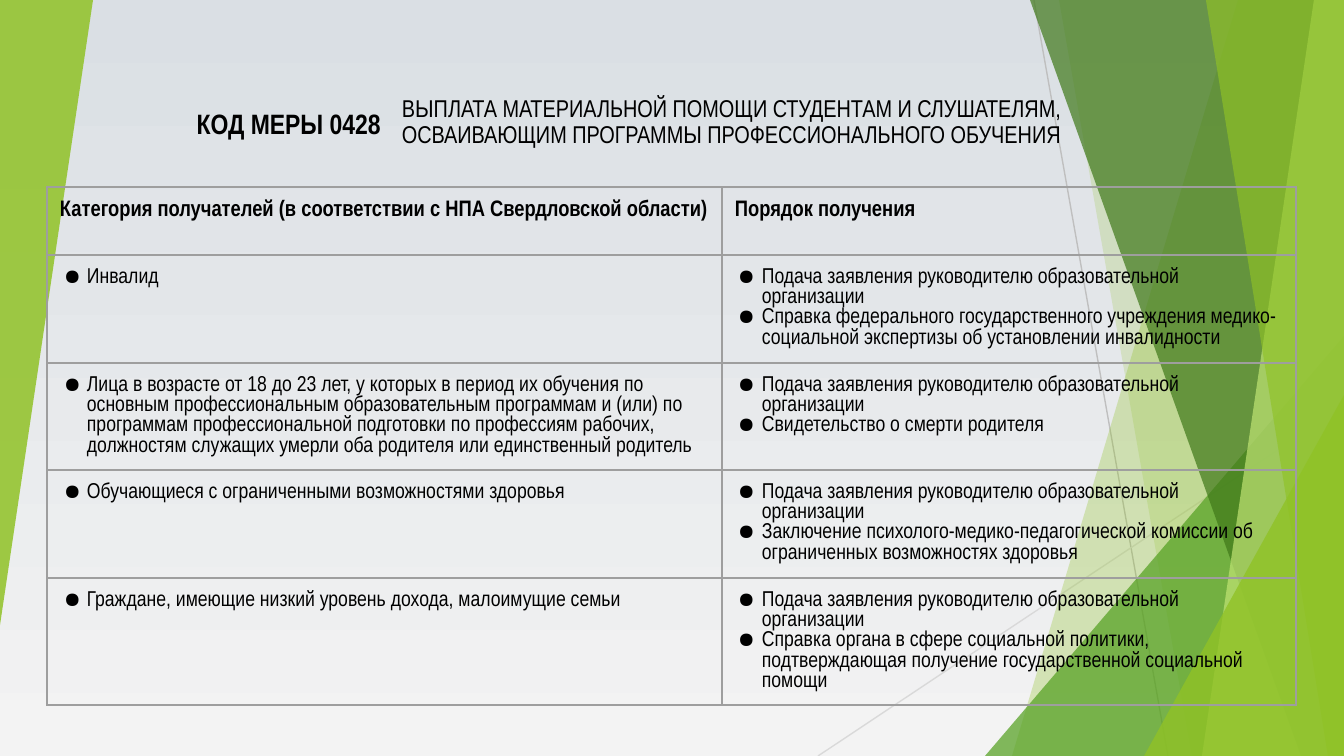
"""Build a slide on payment measure 0428 with a table of recipients."""
from dataclasses import dataclass
from typing import Union

from lxml.etree import SubElement as Sub
from pptx import Presentation as Deck
from pptx.dml.color import RGBColor as RGB
from pptx.enum.shapes import MSO_CONNECTOR as LINK, MSO_SHAPE as KIND
from pptx.enum.text import MSO_ANCHOR as ANCHOR, PP_ALIGN as ALIGN
from pptx.oxml.ns import qn
from pptx.util import Pt

PX = 6804
WIDE, HIGH = 1344, 756
FONT = "Arial Narrow"
BLACK = RGB(0x00, 0x00, 0x00)
LIME = RGB(0x90, 0xC2, 0x26)
PALE = RGB(0xC0, 0xE4, 0x74)
GREEN = RGB(0x54, 0xA0, 0x21)
DARK = RGB(0x3F, 0x78, 0x19)
SKY = RGB(0xDA, 0xDF, 0xE4)
MIST = RGB(0xF3, 0xF3, 0xF3)
GREY = RGB(0xBF, 0xBF, 0xBF)
SILVER = RGB(0xD9, 0xD9, 0xD9)
RULE = RGB(0x9E, 0x9E, 0x9E)


@dataclass
class Ray:
    x: int
    y: int
    to_x: int
    to_y: int
    tint: RGB


@dataclass
class Facet:
    top: int
    foot: int
    tint: RGB
    alpha: int


@dataclass
class Wedge:
    x: int
    y: int
    width: int
    height: int
    tint: RGB
    alpha: int
    turn: int = 0


@dataclass
class Label:
    x: int
    width: int
    text: str
    size: float
    inset: tuple[int, int]
    align: ALIGN
    bold: bool = False
    pitch: float = 1.0


@dataclass
class Row:
    height: int
    who: list[str]
    how: list[str]


APPLY = "Подача заявления руководителю образовательной организации"
RAYS = [Ray(1034, 0, 1168, HIGH, GREY), Ray(WIDE, 406, 818, HIGH, SILVER)]
PANES = [
    Facet(1238, 1012, LIME, 30),
    Facet(1059, 1192, LIME, 20),
    Wedge(985, 336, 359, 420, GREEN, 72),
    Facet(1030, 1301, DARK, 70),
    Facet(1314, 1202, PALE, 70),
    Facet(1206, 1328, LIME, 65),
    Wedge(1144, 395, 200, 361, LIME, 80),
    Wedge(0, 0, 93, 625, LIME, 85, 180),
]
LABELS = [
    Label(392, 847, "ВЫПЛАТА МАТЕРИАЛЬНОЙ ПОМОЩИ СТУДЕНТАМ И СЛУШАТЕЛЯМ, "
          "ОСВАИВАЮЩИМ ПРОГРАММЫ ПРОФЕССИОНАЛЬНОГО ОБУЧЕНИЯ",
          13, (10, 5), ALIGN.LEFT, pitch=0.9),
    Label(110, 284, "КОД МЕРЫ 0428", 15, (13, 13), ALIGN.RIGHT, bold=True),
]
COLS = [675, 574]
ROWS = [
    Row(68, ["Категория получателей (в соответствии с НПА Свердловской области)"],
        ["Порядок получения"]),
    Row(108, ["Инвалид"],
        [APPLY, "Справка федерального государственного учреждения "
         "медико-социальной экспертизы об установлении инвалидности"]),
    Row(107, ["Лица в возрасте от 18 до 23 лет, у которых в период их обучения по "
              "основным профессиональным образовательным программам и (или) по "
              "программам профессиональной подготовки по профессиям рабочих, "
              "должностям служащих умерли оба родителя или единственный родитель"],
        [APPLY, "Свидетельство о смерти родителя"]),
    Row(108, ["Обучающиеся с ограниченными возможностями здоровья"],
        [APPLY, "Заключение психолого-медико-педагогической комиссии об "
         "ограниченных возможностях здоровья"]),
    Row(127, ["Граждане, имеющие низкий уровень дохода, малоимущие семьи"],
        [APPLY, "Справка органа в сфере социальной политики, подтверждающая "
         "получение государственной социальной помощи"]),
]


def draw_ray(slide, ray: Ray) -> None:
    ends = (n * PX for n in (ray.x, ray.y, ray.to_x, ray.to_y))
    line = slide.shapes.add_connector(LINK.STRAIGHT, *ends)
    line.line.color.rgb = ray.tint
    line.line.width = Pt(0.75)
    Sub(line._element.spPr, qn("a:effectLst"))


def draw_pane(slide, pane: Union[Facet, Wedge]) -> None:
    if isinstance(pane, Facet):
        pen = slide.shapes.build_freeform(pane.top, 0, scale=PX)
        pen.add_line_segments([(WIDE, 0), (WIDE, HIGH), (pane.foot, HIGH)], close=True)
        shape = pen.convert_to_shape()
    else:
        box = (n * PX for n in (pane.x, pane.y, pane.width, pane.height))
        shape = slide.shapes.add_shape(KIND.ISOSCELES_TRIANGLE, *box)
        shape.adjustments[0] = 1
        shape.rotation = pane.turn
    shape.shadow.inherit = False
    shape.line.fill.background()
    shape.fill.solid()
    shape.fill.fore_color.rgb = pane.tint
    tone = shape._element.spPr.find(qn("a:solidFill"))[0]
    Sub(tone, qn("a:alpha"), val=str(pane.alpha * 1000))


def style(para, size: float, bold: bool) -> None:
    for run in para.runs:
        run.font.name = FONT
        run.font.size = Pt(size)
        run.font.bold = bold
        run.font.color.rgb = BLACK


def draw_label(slide, label: Label) -> None:
    box = (n * PX for n in (label.x, 71, label.width, 104))
    frame = slide.shapes.add_textbox(*box).text_frame
    frame.word_wrap = True
    frame.vertical_anchor = ANCHOR.MIDDLE
    frame.margin_left = frame.margin_right = label.inset[0] * PX
    frame.margin_top = frame.margin_bottom = label.inset[1] * PX
    frame.text = label.text
    para = frame.paragraphs[0]
    para.alignment = label.align
    para.line_spacing = label.pitch
    style(para, label.size, label.bold)


def add_dot(para, hang: int) -> None:
    props = para._p.get_or_add_pPr()
    props.set("marL", str(27 * PX))
    props.set("indent", str(-hang * PX))
    tone = Sub(props, qn("a:buClr"))
    Sub(tone, qn("a:srgbClr"), val=str(BLACK))
    Sub(props, qn("a:buChar"), char="●")


def fill_cell(cell, lines: list[str], head: bool, hang: int) -> None:
    cell.margin_left = cell.margin_right = 13 * PX
    cell.margin_top = cell.margin_bottom = 13 * PX
    cell.text_frame.text = "\n".join(lines)
    for para in cell.text_frame.paragraphs:
        para.line_spacing = Pt(11.2 if head else 10.8)
        if not head:
            add_dot(para, hang)
        style(para, 12 if head else 11.5, head)
    props = cell._tc.get_or_add_tcPr()
    for side in ("lnL", "lnR", "lnT", "lnB"):
        edge = Sub(props, qn("a:" + side), w=str(Pt(0.75)))
        Sub(Sub(edge, qn("a:solidFill")), qn("a:srgbClr"), val=str(RULE))
    cell.fill.background()


def draw_table(slide) -> None:
    box = (n * PX for n in (47, 187, sum(COLS), sum(r.height for r in ROWS)))
    table = slide.shapes.add_table(len(ROWS), len(COLS), *box).table
    table.first_row = table.horz_banding = False
    for col, width in zip(table.columns, COLS):
        col.width = width * PX
    for i, row in enumerate(ROWS):
        table.rows[i].height = row.height * PX
        fill_cell(table.cell(i, 0), row.who, i == 0, 23)
        fill_cell(table.cell(i, 1), row.how, i == 0, 24)


def main() -> None:
    deck = Deck()
    deck.slide_width, deck.slide_height = WIDE * PX, HIGH * PX
    slide = deck.slides.add_slide(deck.slide_layouts[6])
    fill = slide.background.fill
    fill.gradient()
    fill.gradient_angle = 270
    for stop, tint in zip(fill.gradient_stops, (SKY, MIST)):
        stop.color.rgb = tint
    for ray in RAYS:
        draw_ray(slide, ray)
    for pane in PANES:
        draw_pane(slide, pane)
    for label in LABELS:
        draw_label(slide, label)
    draw_table(slide)
    deck.save("out.pptx")


if __name__ == "__main__":
    main()
